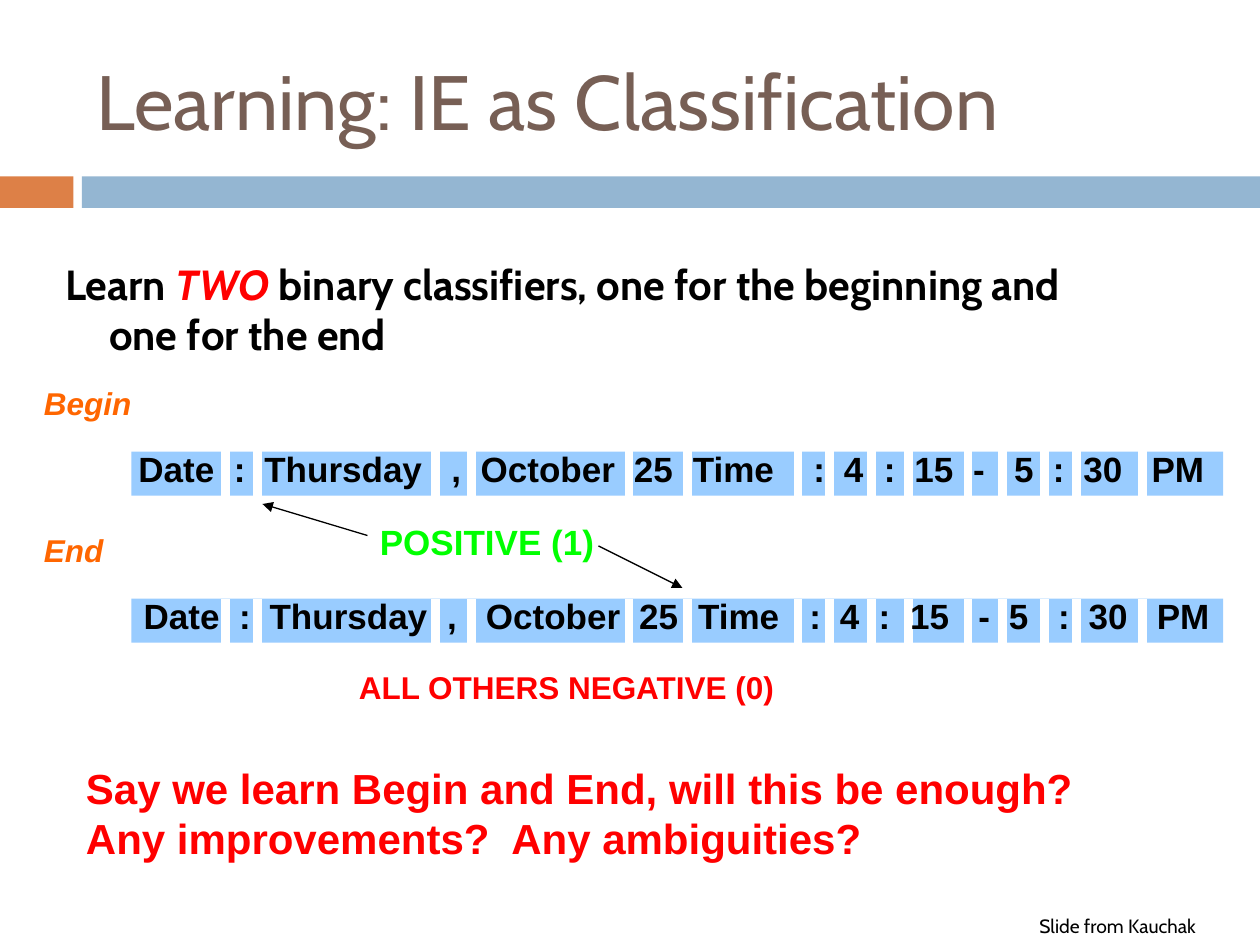
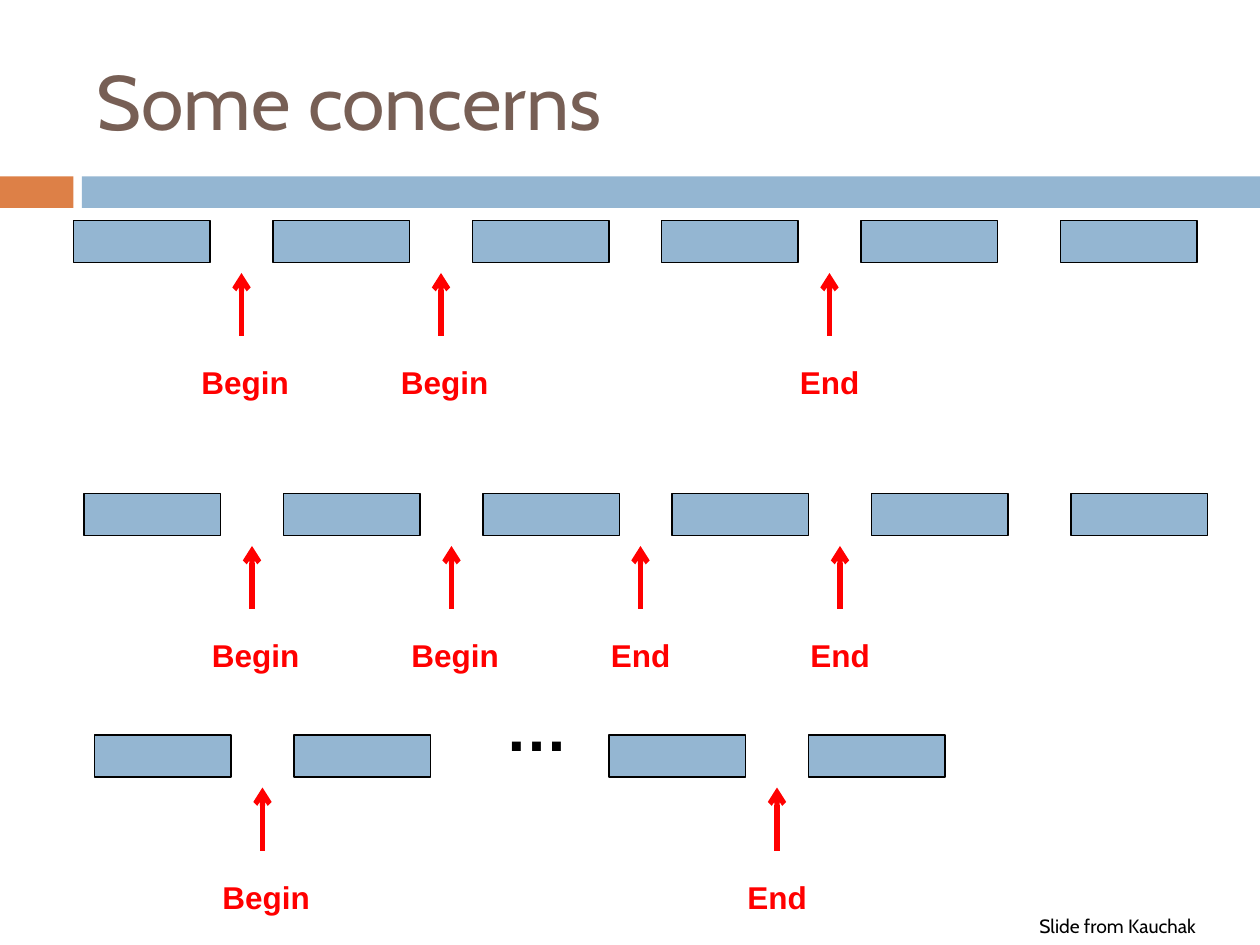
from lxml.etree import SubElement
from pptx import Presentation
from pptx.dml.color import RGBColor
from pptx.enum.shapes import MSO_CONNECTOR, MSO_SHAPE
from pptx.enum.text import MSO_ANCHOR, MSO_AUTO_SIZE, PP_ALIGN
from pptx.oxml.ns import qn
from pptx.util import Emu, Pt

PX = 7620  # EMU per px, 120 px to the inch
COLORS = {
    "title": "775F55", "orange_band": "DD8047", "blue": "94B6D2",
    "token": "99CCFF", "tag": "FF6600", "positive": "00FF00",
    "red": "FF0000", "black": "000000", "white": "FFFFFF",
}
BANDS = [((0, 168, 70, 30), "orange_band"), ((78, 168, 1122, 30), "blue")]
TITLE_BOX = (80, 30, 1070, 130)
FOOTER = ("Slide from Kauchak", (978, 865, 222, 35))

# Slide 1
CLASSIFIER_TITLE = "Learning: IE as Classification"
CLAIM = [
    ("Learn ", "black", False),
    ("TWO", "red", True),
    (" binary classifiers, one for the beginning and one for the end", "black", False),
]
CLAIM_BOX = (50, 240, 996, 130)
TOKENS = ["Date", ":", "Thursday", ",", "October", "25", "Time", ":",
          "4", ":", "15", "-", "5", ":", "30", "PM"]
TOKEN_EDGES = [215, 245, 415, 449, 599, 655, 760, 790,
               830, 865, 922, 955, 995, 1025, 1088]
# strip top, text left and top, tab stops
TOKEN_ROWS = [
    (430, 120, 420,
     [91, 120, 298, 326, 472, 528, 643, 672, 710, 739, 795, 834, 871, 900, 965]),
    (570, 125, 560,
     [91, 120, 289, 326, 472, 528, 634, 663, 700, 730, 795, 824, 871, 900, 965]),
]
# text, box, size, colour, italic
NOTES = [
    ("End", (30, 500, 140, 48), 18, "tag", True),
    ("Begin", (30, 360, 140, 48), 18, "tag", True),
    ("POSITIVE (1)", (350, 490, 250, 52), 20, "positive", False),
    ("ALL OTHERS NEGATIVE (0)", (330, 630, 590, 60), 18, "red", False),
    ("Say we learn Begin and End, will this be enough?  "
     "Any improvements?  Any ambiguities?", (70, 720, 980, 109), 24, "red", False),
]
POSITIVE_ARROWS = [((350, 510), (250, 480)), ((570, 520), (650, 560))]

# Slide 2: left, top, box offsets, markers as (arrow offset, label)
CONCERNS_TITLE = "Some concerns"
SIX_BOXES = [0, 190, 380, 560, 750, 940]
CONCERN_ROWS = [
    (70, 210, SIX_BOXES, [(160, "Begin"), (350, "Begin"), (720, "End")]),
    (80, 470, SIX_BOXES,
     [(160, "Begin"), (350, "Begin"), (530, "End"), (720, "End")]),
    (90, 700, [0, 190, 490, 680], [(160, "Begin"), (650, "End")]),
]
LABEL_SHIFT = {"Begin": 50, "End": 40}
ELLIPSIS_BOX = (470, 650, 260, 85)


def emu(lengths):
    return [Emu(n * PX) for n in lengths]


def rgb(name):
    return RGBColor.from_string(COLORS[name])


def set_font(font, size, color, name="Arial", bold=True, italic=False):
    font.name, font.size, font.bold, font.italic = name, Pt(size), bold, italic
    font.color.rgb = rgb(color)


def add_rect(shapes, box, fill, outline=None):
    sp = shapes.add_shape(MSO_SHAPE.RECTANGLE, *emu(box))
    sp.shadow.inherit = False
    sp.fill.solid()
    sp.fill.fore_color.rgb = rgb(fill)
    if outline:
        sp.line.color.rgb = rgb(outline)
        sp.line.width = Pt(0.75)
    else:
        sp.line.fill.background()
    return sp


def add_line(shapes, start, end, color, width, head=None):
    line = shapes.add_connector(MSO_CONNECTOR.STRAIGHT, *emu(start + end))
    line.line.color.rgb = rgb(color)
    line.line.width = Pt(width)
    sp_pr = line.element.spPr
    if head:
        SubElement(sp_pr.find(qn("a:ln")), qn("a:tailEnd"), type=head)
    SubElement(sp_pr, qn("a:effectLst"))


def add_text(shapes, text, box, size, color, tabs=(), **style):
    tf = shapes.add_textbox(*emu(box)).text_frame
    tf.word_wrap = True
    tf.auto_size = MSO_AUTO_SIZE.SHAPE_TO_FIT_TEXT
    p = tf.paragraphs[0]
    p.text = text
    if tabs:
        tab_list = SubElement(p._p.get_or_add_pPr(), qn("a:tabLst"))
        for stop in tabs:
            SubElement(tab_list, qn("a:tab"), pos=str(stop * PX), algn="l")
    set_font(p.font, size, color, **style)


def place(sp, box):
    sp.left, sp.top, sp.width, sp.height = emu(box)
    sp.text_frame.auto_size = MSO_AUTO_SIZE.NONE


def add_bands(prs, slide):
    """Draw the bands and move them behind the master's placeholders."""
    tree = prs.slide_master.shapes.element
    for i, (box, color) in enumerate(BANDS):
        tree.insert(2 + i, add_rect(slide.shapes, box, color).element)


def new_slide(prs, layout, title):
    slide = prs.slides.add_slide(prs.slide_layouts[layout])
    sp = slide.shapes.title
    place(sp, TITLE_BOX)
    tf = sp.text_frame
    tf.vertical_anchor = MSO_ANCHOR.MIDDLE
    p = tf.paragraphs[0]
    p.text = title
    p.alignment = PP_ALIGN.LEFT
    set_font(p.font, 44, "title", "Cabin", bold=False)
    return slide


def add_footer(slide):
    text, box = FOOTER
    add_text(slide.shapes, text, box, 11, "black", name="Cabin", bold=False)


def fill_claim(sp):
    place(sp, CLAIM_BOX)
    p = sp.text_frame.paragraphs[0]
    p.space_before = Pt(7)
    p_pr = p._p.get_or_add_pPr()
    p_pr.set("marL", str(42 * PX))
    p_pr.set("indent", str(-42 * PX))
    SubElement(p_pr, qn("a:buNone"))
    for text, color, italic in CLAIM:
        r = p.add_run()
        r.text = text
        set_font(r.font, 24, color, "Cabin", italic=italic)


def add_token_row(shapes, top, text_left, text_top, tabs):
    strip = shapes.add_group_shape().shapes
    add_rect(strip, (125, top, 1040, 42), "token")
    for x in TOKEN_EDGES:
        add_line(strip, (x, top), (x, top + 42), "white", 5)
    add_text(shapes, "\t".join(TOKENS), (text_left, text_top, 1075, 54),
             20, "black", tabs)


def add_concern_row(shapes, left, top, boxes, markers):
    for offset in boxes:
        add_rect(shapes, (left + offset, top, 130, 40), "blue", "black")
    for offset, label in markers:
        x = left + offset
        add_line(shapes, (x, top + 110), (x, top + 50), "red", 3, "arrow")
        add_text(shapes, label, (x - LABEL_SHIFT[label], top + 130, 110, 48),
                 18, "red")


def build_classifier_slide(prs):
    slide = new_slide(prs, 1, CLASSIFIER_TITLE)
    add_bands(prs, slide)
    fill_claim(slide.placeholders[1])
    for row in TOKEN_ROWS:
        add_token_row(slide.shapes, *row)
    for text, box, size, color, italic in NOTES:
        add_text(slide.shapes, text, box, size, color, italic=italic)
    for start, end in POSITIVE_ARROWS:
        add_line(slide.shapes, start, end, "black", 0.75, "triangle")
    add_footer(slide)


def build_concerns_slide(prs):
    slide = new_slide(prs, 5, CONCERNS_TITLE)
    for row in CONCERN_ROWS:
        add_concern_row(slide.shapes, *row)
    add_text(slide.shapes, "…", ELLIPSIS_BOX, 36, "black")
    add_footer(slide)


def main():
    prs = Presentation()
    prs.slide_width, prs.slide_height = emu((1200, 900))
    build_classifier_slide(prs)
    build_concerns_slide(prs)
    prs.save("out.pptx")


if __name__ == "__main__":
    main()
